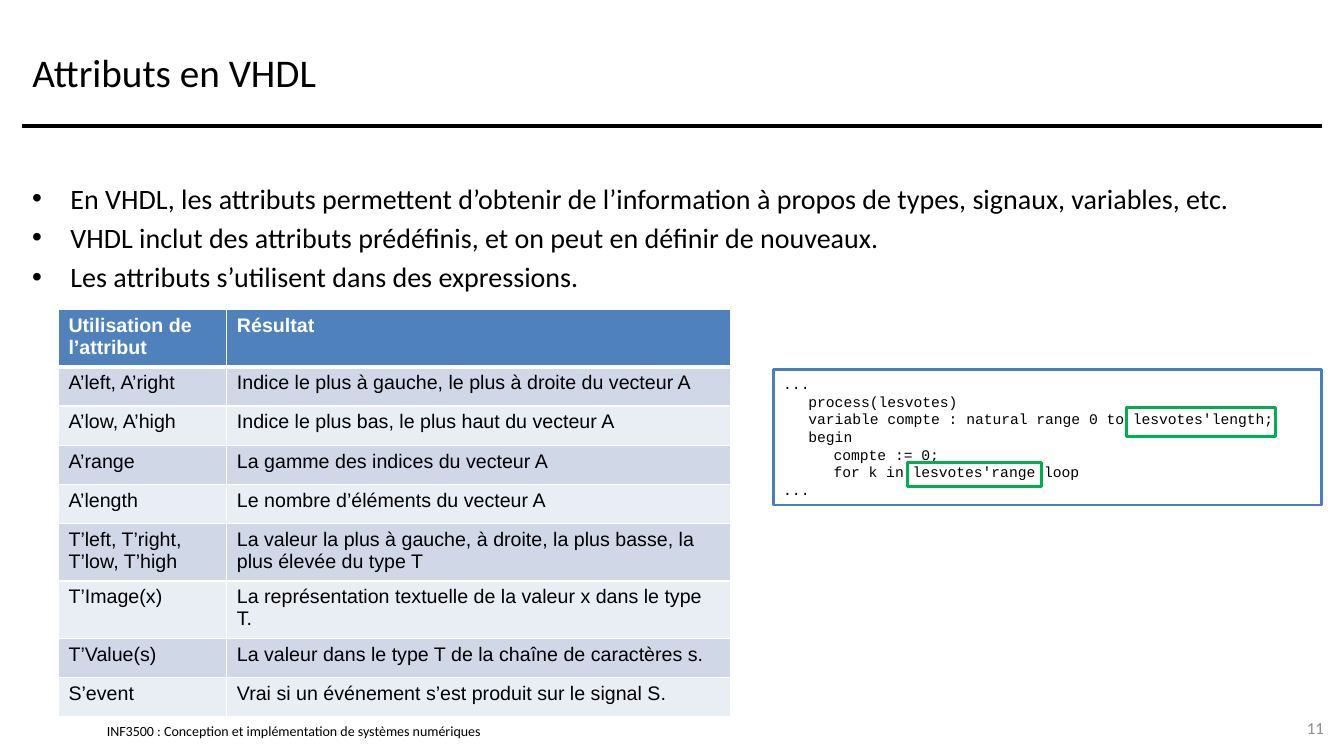
from dataclasses import dataclass

from lxml import etree
from pptx import Presentation
from pptx.dml.color import RGBColor
from pptx.enum.shapes import MSO_CONNECTOR, MSO_SHAPE
from pptx.enum.text import MSO_ANCHOR, PP_ALIGN
from pptx.oxml.ns import qn
from pptx.util import Inches, Pt

RECTANGLE, STRAIGHT = MSO_SHAPE.RECTANGLE, MSO_CONNECTOR.STRAIGHT
TOP, MIDDLE = MSO_ANCHOR.TOP, MSO_ANCHOR.MIDDLE
LEFT, RIGHT, JUSTIFY = PP_ALIGN.LEFT, PP_ALIGN.RIGHT, PP_ALIGN.JUSTIFY

# Content
TITLE = "Attributs en VHDL"
POINTS = [
    "En VHDL, les attributs permettent d’obtenir de l’information à propos de types, signaux, variables, etc.",
    "VHDL inclut des attributs prédéfinis, et on peut en définir de nouveaux.",
    "Les attributs s’utilisent dans des expressions.",
]
ATTRIBUTES = [
    ("Utilisation de l’attribut", "Résultat"),
    ("A’left, A’right", "Indice le plus à gauche, le plus à droite du vecteur A"),
    ("A’low, A’high", "Indice le plus bas, le plus haut du vecteur A"),
    ("A’range", "La gamme des indices du vecteur A"),
    ("A’length", "Le nombre d’éléments du vecteur A"),
    ("T’left, T’right, T’low, T’high",
     "La valeur la plus à gauche, à droite, la plus basse, la plus élevée du type T"),
    ("T’Image(x)", "La représentation textuelle de la valeur x dans le type T."),
    ("T’Value(s)", "La valeur dans le type T de la chaîne de caractères s."),
    ("S’event", "Vrai si un événement s’est produit sur le signal S."),
]
CODE = [
    "...",
    "\tprocess(lesvotes)",
    "\tvariable compte : natural range 0 to lesvotes'length;",
    "\tbegin",
    "\t\tcompte := 0;",
    "\t\tfor k in lesvotes'range loop",
    "...",
]
FOOTER = "INF3500 : Conception et implémentation de systèmes numériques"
PAGE = "11"

# Places: left, top, width, height in inches
MARGIN, CONTENT_WIDTH = 0.22, 12.89
RULE_Y = 1.25
TABLE_AT = (0.58, 3.07)
COLUMN_WIDTHS = (1.67, 5)
ROW_HEIGHT, TALL_ROW_HEIGHT = 0.39, 0.55
TALL_ROWS = (0, 5)
CODE_AT = (7.67, 3.67, 5.44, 1.34)
HIGHLIGHTS = [(11.17, 4.04, 1.48, 0.29), (9, 4.59, 1.33, 0.24)]
TAB_STOPS = [0.25 * n for n in range(1, 6)]
BULLET_INDENT = 0.38


@dataclass(frozen=True)
class Theme:
    body_font: str = "Calibri"
    table_font: str = "Arial"
    code_font: str = "Courier New"
    title_size: float = 28
    body_size: float = 20
    table_size: float = 14
    code_size: float = 10.5
    page_size: float = 12
    footer_size: float = 10
    ink: str = "000000"
    paper: str = "FFFFFF"
    page: str = "8C8C8C"
    header: str = "4F81BD"
    bands: tuple = ("E9EDF4", "D0D8E8")
    code_border: str = "4B7EBC"
    highlight: str = "00B050"


THEME = Theme()


def inches(values):
    return [Inches(value) for value in values]


def color(value):
    return RGBColor.from_string(value)


def write(frame, lines, size, font=THEME.body_font, ink=THEME.ink, bold=False,
          align=LEFT, anchor=TOP, space=0, bullet=False, tabs=(), inset=None):
    frame.word_wrap = True
    frame.vertical_anchor = anchor
    if inset is not None:
        frame.margin_left = frame.margin_right = Inches(inset)
        frame.margin_top = frame.margin_bottom = Inches(inset)
    for index, line in enumerate(lines):
        paragraph = frame.add_paragraph() if index else frame.paragraphs[0]
        properties = paragraph._p.get_or_add_pPr()
        if bullet:
            properties.set("marL", str(Inches(BULLET_INDENT)))
            properties.set("indent", str(-Inches(BULLET_INDENT)))
            etree.SubElement(properties, qn("a:buFont"), typeface="Arial")
            etree.SubElement(properties, qn("a:buChar"), char="•")
        if tabs:
            stops = etree.SubElement(properties, qn("a:tabLst"))
            for stop in tabs:
                etree.SubElement(stops, qn("a:tab"), pos=str(Inches(stop)), algn="l")
        paragraph.alignment = align
        paragraph.space_before = Pt(space if index else 0)
        run = paragraph.add_run()
        run.text = line
        run.font.name, run.font.size, run.font.bold = font, Pt(size), bold
        run.font.color.rgb = color(ink)


def add_text(slide, place, lines, size, **formats):
    write(slide.shapes.add_textbox(*inches(place)).text_frame, lines, size, **formats)


def add_frame(slide, place, border):
    frame = slide.shapes.add_shape(RECTANGLE, *inches(place))
    frame.shadow.inherit = False
    frame.fill.background()
    frame.line.color.rgb = color(border)
    frame.line.width = Pt(2)
    return frame


def border_cell(cell, widths):
    properties = cell._tc.get_or_add_tcPr()
    for position, (side, width) in enumerate(widths.items()):
        line = etree.Element(qn("a:" + side), w=str(Pt(width)))
        fill = etree.SubElement(line, qn("a:solidFill"))
        etree.SubElement(fill, qn("a:srgbClr"), val=THEME.paper)
        properties.insert(position, line)


def add_attribute_table(slide):
    heights = [TALL_ROW_HEIGHT if row in TALL_ROWS else ROW_HEIGHT
               for row in range(len(ATTRIBUTES))]
    place = (*TABLE_AT, sum(COLUMN_WIDTHS), sum(heights))
    table = slide.shapes.add_table(len(heights), len(COLUMN_WIDTHS), *inches(place)).table
    for column, width in zip(table.columns, COLUMN_WIDTHS):
        column.width = Inches(width)
    for row, entries in enumerate(ATTRIBUTES):
        table.rows[row].height = Inches(heights[row])
        is_header = row == 0
        for column, entry in enumerate(entries):
            cell = table.cell(row, column)
            cell.fill.solid()
            cell.fill.fore_color.rgb = color(THEME.header if is_header else THEME.bands[row % 2])
            border_cell(cell, {"lnL": 1, "lnR": 1, "lnT": 3 if row == 1 else 1,
                               "lnB": 3 if is_header else 1})
            write(cell.text_frame, [entry], THEME.table_size, font=THEME.table_font,
                  ink=THEME.paper if is_header else THEME.ink, bold=is_header)


def main():
    deck = Presentation()
    deck.slide_width, deck.slide_height = Inches(13.33), Inches(7.5)
    slide = deck.slides.add_slide(deck.slide_layouts[5])

    # Title and rule
    title = slide.shapes.title
    title.left, title.top, title.width, title.height = inches((MARGIN, 0.17, CONTENT_WIDTH, 1.08))
    write(title.text_frame, [TITLE], THEME.title_size, anchor=MIDDLE)
    rule = slide.shapes.add_connector(
        STRAIGHT, *inches((MARGIN, RULE_Y, MARGIN + CONTENT_WIDTH, RULE_Y)))
    rule.line.color.rgb = color(THEME.ink)
    rule.line.width = Pt(3)
    etree.SubElement(rule._element.spPr, qn("a:effectLst"))

    # Points
    add_text(slide, (MARGIN, 1.75, CONTENT_WIDTH, 5.25), POINTS, THEME.body_size,
             space=0.2 * THEME.body_size, bullet=True)

    # Table of attributes
    add_attribute_table(slide)

    # Code example with its highlighted attributes
    code = add_frame(slide, CODE_AT, THEME.code_border)
    write(code.text_frame, CODE, THEME.code_size, font=THEME.code_font,
          align=JUSTIFY, tabs=TAB_STOPS)
    for place in HIGHLIGHTS:
        add_frame(slide, place, THEME.highlight)

    # Footer and page number
    add_text(slide, (1.06, 7.17, 5.11, 0.17), [FOOTER], THEME.footer_size, anchor=MIDDLE, inset=0)
    add_text(slide, (12.56, 7.02, 0.67, 0.4), [PAGE], THEME.page_size, ink=THEME.page,
             align=RIGHT, anchor=MIDDLE)

    deck.save("out.pptx")


if __name__ == "__main__":
    main()
